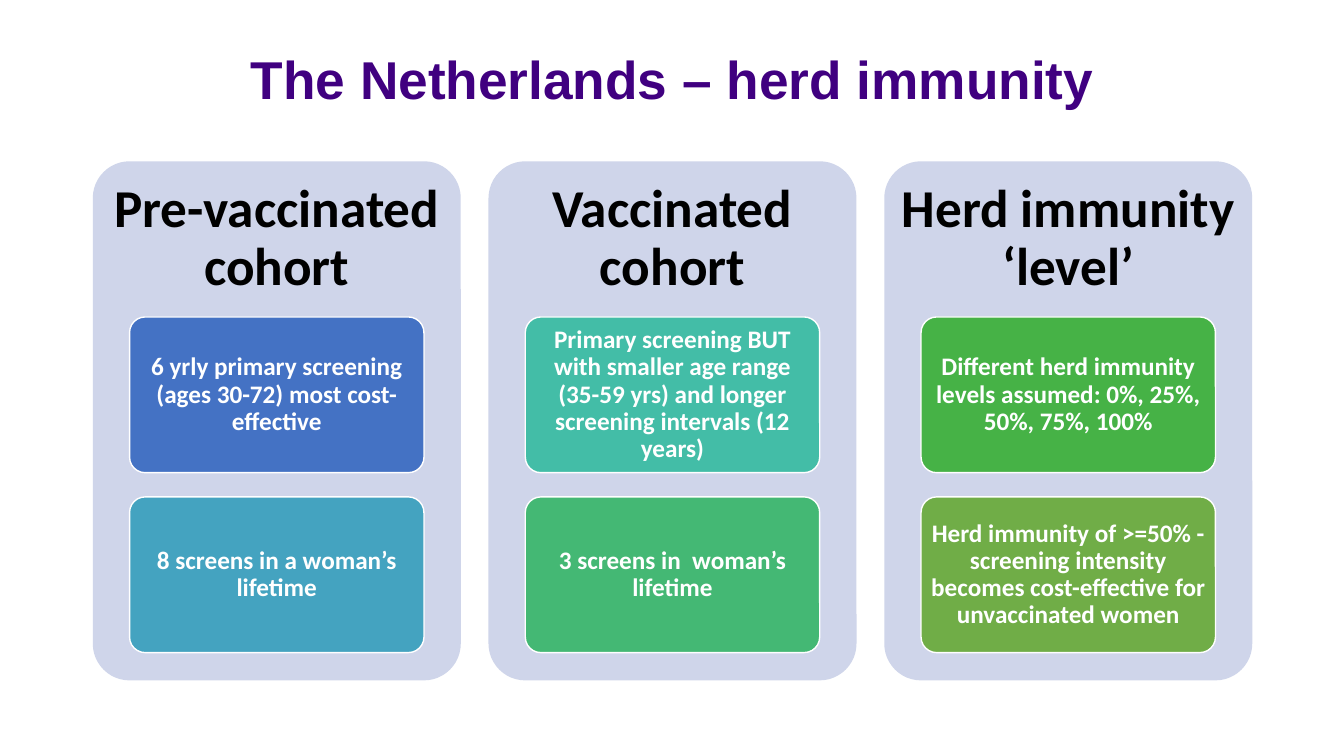
"""Build a slide comparing screening findings for three Dutch cohorts."""
from pptx import Presentation
from pptx.dml.color import RGBColor as RGB
from pptx.enum.shapes import MSO_SHAPE as SHAPE
from pptx.enum.text import MSO_ANCHOR as ANCHOR, PP_ALIGN as ALIGN
from pptx.util import Inches, Pt

THEME = {
    "title": {"name": "Arial", "size": Pt(38), "bold": True, "color": "400080"},
    "heading": {"name": "Calibri", "size": Pt(38), "bold": True, "color": "000000"},
    "card": {"name": "Calibri", "size": Pt(18), "bold": True, "color": "FFFFFF"},
    "panel_fill": "CFD5EA",
    "card_line": "FFFFFF",
}
COHORTS = [
    ("Pre-vaccinated cohort", [
        ("6 yrly primary screening (ages 30-72) most cost-effective", "4472C4"),
        ("8 screens in a woman’s lifetime", "44A3C0")]),
    ("Vaccinated cohort", [
        ("Primary screening BUT with smaller age range (35-59 yrs) and longer "
         "screening intervals (12 years)", "43BDA7"),
        ("3 screens in  woman’s lifetime", "44B874")]),
    ("Herd immunity ‘level’", [
        ("Different herd immunity levels assumed: 0%, 25%, 50%, 75%, 100%", "46B246"),
        ("Herd immunity of >=50% - screening intensity becomes cost-effective "
         "for unvaccinated women", "70AD47")]),
]
LEFT, WIDTH = 0.92, 11.5
PANEL_TOP, PANEL_W, PANEL_H = 1.6, 3.65, 5.15
PITCH = (WIDTH - PANEL_W) / (len(COHORTS) - 1)
CARD_W, CARD_H, CARD_GAP = 0.8 * PANEL_W, 0.3 * PANEL_H, 0.24


def add_text(sp, text, style, inset_x, inset_y):
    tf = sp.text_frame
    frame = {"word_wrap": True, "vertical_anchor": ANCHOR.MIDDLE,
             "margin_left": Inches(inset_x), "margin_right": Inches(inset_x),
             "margin_top": Inches(inset_y), "margin_bottom": Inches(inset_y)}
    for key, value in frame.items():
        setattr(tf, key, value)
    p = tf.paragraphs[0]
    p.alignment, p.line_spacing = ALIGN.CENTER, 0.9
    r = p.add_run()
    r.text = text
    for key, value in THEME[style].items():
        if key == "color":
            r.font.color.rgb = RGB.from_string(value)
        else:
            setattr(r.font, key, value)


def add_box(s, x, y, w, h, fill):
    sp = s.shapes.add_shape(SHAPE.ROUNDED_RECTANGLE, *map(Inches, (x, y, w, h)))
    sp.adjustments[0] = 0.1
    sp.shadow.inherit = False
    sp.fill.solid()
    sp.fill.fore_color.rgb = RGB.from_string(fill)
    sp.line.fill.background()
    return sp


prs = Presentation()
prs.slide_width, prs.slide_height = Inches(13.33), Inches(7.5)
s = prs.slides.add_slide(prs.slide_layouts[6])

title = s.shapes.add_textbox(*map(Inches, (LEFT, 0.09, WIDTH, 1.45)))
add_text(title, "The Netherlands – herd immunity", "title", 0.1, 0.05)

for col, (heading, cards) in enumerate(COHORTS):
    x = LEFT + col * PITCH
    add_box(s, x, PANEL_TOP, PANEL_W, PANEL_H, THEME["panel_fill"])
    head = s.shapes.add_textbox(*map(Inches, (x, PANEL_TOP, PANEL_W, CARD_H)))
    add_text(head, heading, "heading", 0.16, 0.16)
    for row, (text, fill) in enumerate(cards):
        y = PANEL_TOP + CARD_H + row * (CARD_H + CARD_GAP)
        card = add_box(s, x + (PANEL_W - CARD_W) / 2, y, CARD_W, CARD_H, fill)
        card.line.color.rgb = RGB.from_string(THEME["card_line"])
        card.line.width = Pt(1)
        add_text(card, text, "card", 0.05, 0.04)

prs.save("out.pptx")
